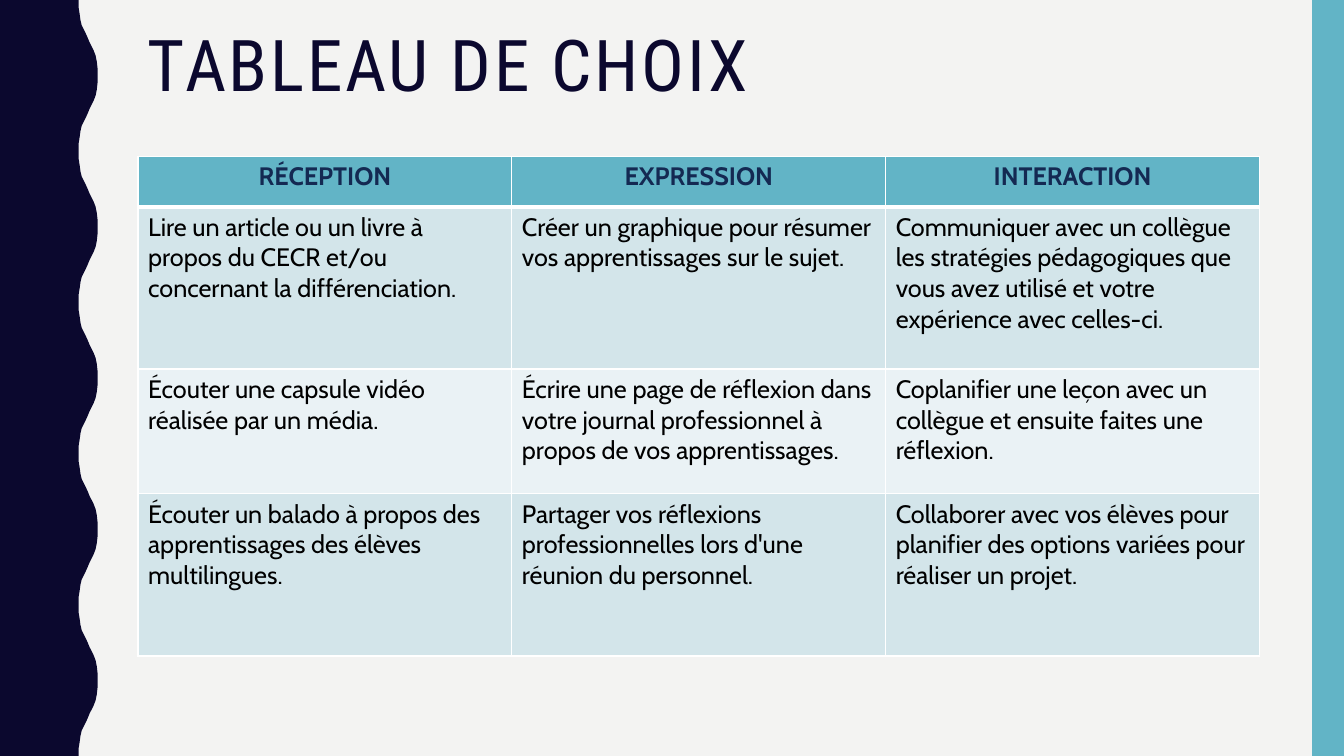
"""Build the slide "Tableau de choix": a wavy side band and a table of tasks."""
from lxml import etree
from pptx import Presentation
from pptx.dml.color import RGBColor
from pptx.enum.shapes import MSO_SHAPE
from pptx.enum.text import MSO_ANCHOR, PP_ALIGN
from pptx.oxml.ns import qn
from pptx.util import Cm, Pt

RECT = MSO_SHAPE.RECTANGLE
TOP = MSO_ANCHOR.TOP
CENTER, LEFT = PP_ALIGN.CENTER, PP_ALIGN.LEFT
COLORS = {
    "paper": "F3F3F2", "night": "0B082E", "teal": "62B4C6", "navy": "142952",
    "black": "000000", "white": "FFFFFF", "dark": "D3E5EA", "light": "EAF2F5",
}
WIDTH, HEIGHT = 33.87, 19.05


def paint(fill, name):
    fill.solid()
    fill.fore_color.rgb = RGBColor.from_string(COLORS[name])


def edge(cell, side, points):
    line = etree.SubElement(cell._tc.get_or_add_tcPr(), qn(f"a:ln{side}"), w=str(Pt(points)))
    solid = etree.SubElement(line, qn("a:solidFill"))
    etree.SubElement(solid, qn("a:srgbClr"), val=COLORS["white"])


deck = Presentation()
deck.slide_width, deck.slide_height = Cm(WIDTH), Cm(HEIGHT)
slide = deck.slides.add_slide(deck.slide_layouts[6])
paint(slide.background.fill, "paper")

curve = [
    (1.98, 0), (1.98, 0.18), (2.01, 0.36), (2.03, 0.51), (2.06, 0.64),
    (2.11, 0.74), (2.16, 0.84), (2.21, 0.95), (2.26, 1.07), (2.31, 1.17),
    (2.36, 1.27), (2.41, 1.4), (2.44, 1.55), (2.46, 1.73), (2.46, 1.9),
]
count = 10
half = HEIGHT / count
points = []
for turn in range(count):
    if turn % 2 == 0:
        points += [(x, turn * half + y) for x, y in curve]
    else:
        points += [(x, (turn + 1) * half - y) for x, y in reversed(curve)]
points.append((0, HEIGHT))
pen = slide.shapes.build_freeform(0, 0)
pen.add_line_segments([(Cm(x), Cm(y)) for x, y in points], close=True)
wave = pen.convert_to_shape()
band = slide.shapes.add_shape(RECT, Cm(33.07), 0, Cm(0.8), Cm(HEIGHT))
for shape, name in ((wave, "night"), (band, "teal")):
    shape.shadow.inherit = False
    paint(shape.fill, name)
    shape.line.fill.background()

title = slide.shapes.add_textbox(Cm(3.48), Cm(0.64), Cm(28.27), Cm(4.14))
frame = title.text_frame
frame.word_wrap = True
frame.vertical_anchor = TOP
frame.text = "TABLEAU DE CHOIX"
para = frame.paragraphs[0]
para.line_spacing = 0.9
run = para.runs[0]
run.font.name, run.font.size = "Roboto Condensed", Pt(51)
paint(run.font.fill, "night")
run.font._element.set("spc", "200")

rows = [
    ["RÉCEPTION", "EXPRESSION", "INTERACTION"],
    ["Lire un article ou un livre à propos du CECR et/ou concernant la différenciation.",
     "Créer un graphique pour résumer vos apprentissages sur le sujet.",
     "Communiquer avec un collègue les stratégies pédagogiques que vous avez utilisé "
     "et votre expérience avec celles-ci."],
    ["Écouter une capsule vidéo réalisée par un média.",
     "Écrire une page de réflexion dans votre journal professionnel à propos de vos "
     "apprentissages.",
     "Coplanifier une leçon avec un collègue et ensuite faites une réflexion."],
    ["Écouter un balado à propos des apprentissages des élèves multilingues.",
     "Partager vos réflexions professionnelles lors d'une réunion du personnel.",
     "Collaborer avec vos élèves pour planifier des options variées pour réaliser "
     "un projet."],
]
heights = [1.27, 4.09, 3.14, 4.09]
fills = ["teal", "dark", "light", "dark"]
grid = slide.shapes.add_table(4, 3, Cm(3.48), Cm(3.94), Cm(28.27), Cm(sum(heights))).table
for col in grid.columns:
    col.width = Cm(9.42)
for r, texts in enumerate(rows):
    grid.rows[r].height = Cm(heights[r])
    head = r == 0
    for c, text in enumerate(texts):
        cell = grid.cell(r, c)
        for side in "LRTB":
            thick = (head and side == "B") or (r == 1 and side == "T")
            edge(cell, side, 3 if thick else 1)
        paint(cell.fill, fills[r])
        cell.text_frame.text = text
        para = cell.text_frame.paragraphs[0]
        para.alignment = CENTER if head else LEFT
        font = para.runs[0].font
        font.name, font.size, font.bold = "Cabin", Pt(18), head
        paint(font.fill, "navy" if head else "black")

deck.save("out.pptx")
